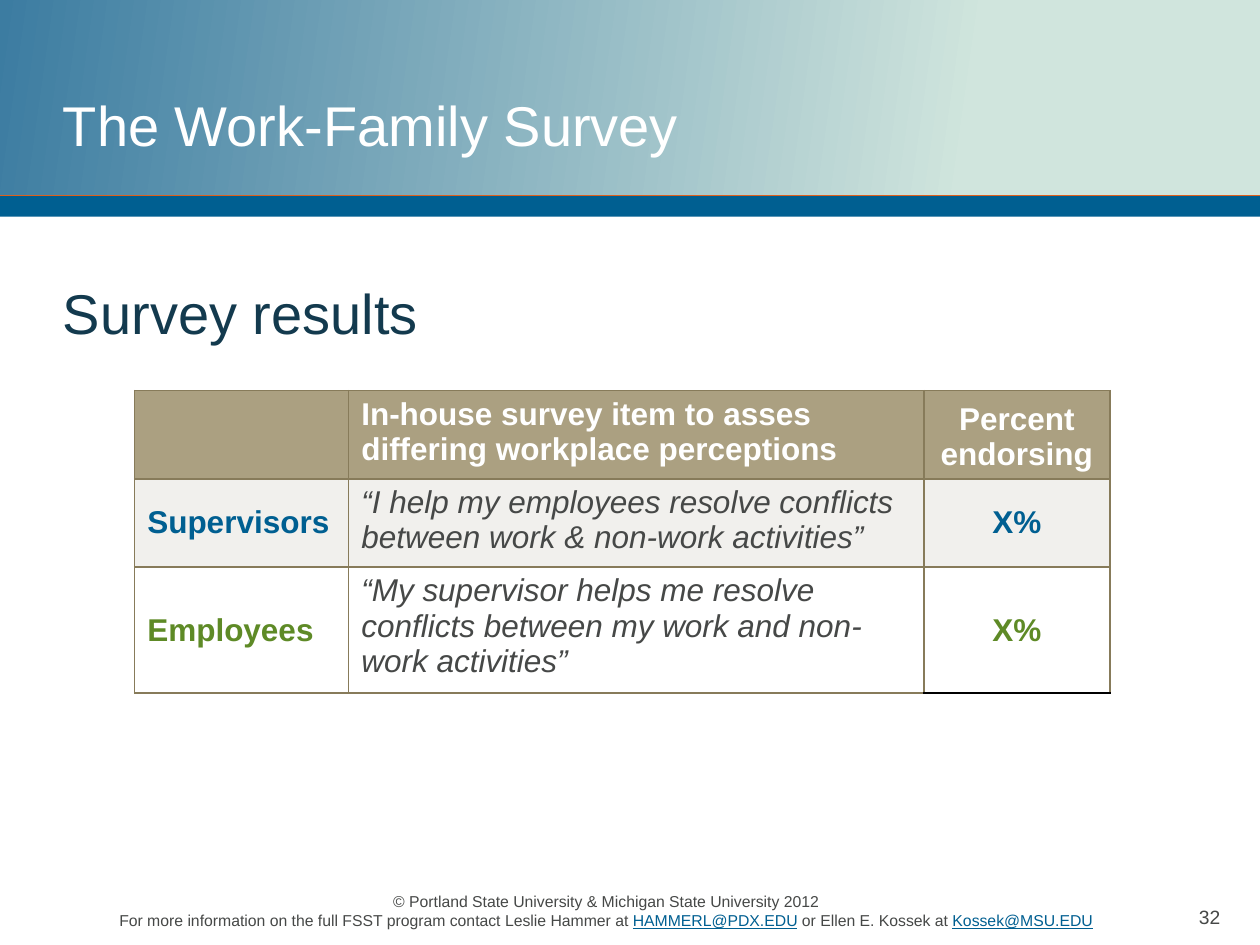
from dataclasses import dataclass

from lxml.etree import SubElement
from pptx import Presentation
from pptx.dml.color import RGBColor
from pptx.enum.shapes import MSO_CONNECTOR as Link, MSO_SHAPE as Form
from pptx.enum.text import MSO_ANCHOR as Anchor, PP_ALIGN as Align
from pptx.oxml.ns import qn
from pptx.util import Pt

BLUE = RGBColor(0x00, 0x5F, 0x91)
STEEL = RGBColor(0x3C, 0x7C, 0xA1)
MINT = RGBColor(0xD0, 0xE5, 0xDD)
RUST = RGBColor(0xDE, 0x60, 0x1D)
GREY = RGBColor(0x46, 0x48, 0x47)
NAVY = RGBColor(0x13, 0x3A, 0x4E)
GREEN = RGBColor(0x5E, 0x8A, 0x26)
TAN = RGBColor(0xAB, 0xA0, 0x81)
BROWN = RGBColor(0x87, 0x7B, 0x5A)
PALE = RGBColor(0xF1, 0xF0, 0xED)
WHITE = RGBColor(0xFF, 0xFF, 0xFF)
BLACK = RGBColor(0x00, 0x00, 0x00)


@dataclass
class Label:
    box: tuple
    lines: list
    size: float
    color: RGBColor
    align: Align = Align.LEFT
    anchor: Anchor = Anchor.TOP
    left: float = 7.2
    top: float = 3.6


@dataclass
class Row:
    texts: tuple
    fill: RGBColor
    accent: RGBColor
    height: float
    head: bool = False


MAILS = ("HAMMERL@PDX.EDU", "Kossek@MSU.EDU")
LABELS = [
    Label((678, 514, 42, 21), [["32"]], 11, GREY),
    Label((36, 506, 620.6, 40), [
        ["© Portland State University & Michigan State University 2012"],
        ["For more information on the full FSST program contact Leslie Hammer at ",
         MAILS[0], " or Ellen E. Kossek at ", MAILS[1]],
    ], 9, GREY, Align.CENTER),
    Label((36, 30.2, 648, 81.4), [["The Work-Family Survey"]], 32, WHITE,
          anchor=Anchor.MIDDLE, left=0),
    Label((36, 159, 648, 320), [["Survey results"]], 32, NAVY, left=0, top=0),
]
WIDTHS = (122.3, 328.6, 106.4)
ROWS = [
    Row(("", "In-house survey item to asses differing workplace perceptions",
         "Percent endorsing"), TAN, WHITE, 47.4, True),
    Row(("Supervisors",
         "“I help my employees resolve conflicts between work & non-work activities”",
         "X%"), PALE, BLUE, 47.4),
    Row(("Employees",
         "“My supervisor helps me resolve conflicts between my work and non-work activities”",
         "X%"), WHITE, GREEN, 67.4),
]


def style(para, size: float, color: RGBColor, bold=False, slant=False) -> None:
    font = para.font
    font.name, font.size = "Arial", Pt(size)
    font.bold, font.italic = bold, slant
    font.color.rgb = color


def write(slide, label: Label) -> None:
    frame = slide.shapes.add_textbox(*map(Pt, label.box)).text_frame
    frame.word_wrap = True
    frame.vertical_anchor = label.anchor
    frame.margin_left, frame.margin_top = Pt(label.left), Pt(label.top)
    for i, line in enumerate(label.lines):
        para = frame.add_paragraph() if i else frame.paragraphs[0]
        para.alignment = label.align
        style(para, label.size, label.color)
        for text in line:
            run = para.add_run()
            run.text = text
            if text in MAILS:
                run.font.underline = True
                run.font.color.rgb = BLUE


def bar(slide, top: float, height: float):
    shape = slide.shapes.add_shape(Form.RECTANGLE, 0, Pt(top), Pt(720), Pt(height))
    shape.shadow.inherit = False
    shape.line.fill.background()
    return shape


def banner(slide) -> None:
    fill = bar(slide, 0, 111.6).fill
    fill.gradient()
    fill.gradient_angle = 352
    for stop, color, place in zip(fill.gradient_stops, (STEEL, MINT), (0, 0.77)):
        stop.color.rgb = color
        stop.position = place
    strip = bar(slide, 111.6, 12.2)
    strip.fill.solid()
    strip.fill.fore_color.rgb = BLUE
    rule = slide.shapes.add_connector(Link.STRAIGHT, 0, Pt(111.6), Pt(720), Pt(111.6))
    rule.line.color.rgb = RUST
    rule.line.width = Pt(0.75)
    SubElement(rule._element.spPr, qn("a:effectLst"))


def edge(cell, base: RGBColor) -> None:
    props = cell._tc.get_or_add_tcPr()
    for i, side in enumerate(("lnL", "lnR", "lnT", "lnB")):
        line = SubElement(props, qn(f"a:{side}"), w=str(Pt(1)))
        fill = SubElement(line, qn("a:solidFill"))
        SubElement(fill, qn("a:srgbClr"), val=str(base if side == "lnB" else BROWN))


def grid(slide) -> None:
    high = sum(row.height for row in ROWS)
    table = slide.shapes.add_table(len(ROWS), len(WIDTHS), Pt(77), Pt(223.2),
                                   Pt(sum(WIDTHS)), Pt(high)).table
    for col, width in zip(table.columns, WIDTHS):
        col.width = Pt(width)
    for r, row in enumerate(ROWS):
        table.rows[r].height = Pt(row.height)
        for c, text in enumerate(row.texts):
            cell = table.cell(r, c)
            last = r == len(ROWS) - 1 and c == len(WIDTHS) - 1
            edge(cell, BLACK if last else BROWN)
            cell.fill.solid()
            cell.fill.fore_color.rgb = row.fill
            if c != 1:
                cell.vertical_anchor = Anchor.BOTTOM if row.head else Anchor.MIDDLE
            para = cell.text_frame.paragraphs[0]
            para.alignment = Align.CENTER if c == 2 else Align.LEFT
            quote = c == 1 and not row.head
            style(para, 18, GREY if quote else row.accent, not quote, quote)
            if text:
                para.add_run().text = text


def main() -> None:
    deck = Presentation()
    deck.slide_width, deck.slide_height = Pt(720), Pt(540)
    slide = deck.slides.add_slide(deck.slide_layouts[6])
    banner(slide)
    for label in LABELS:
        write(slide, label)
    grid(slide)
    deck.save("out.pptx")


if __name__ == "__main__":
    main()
